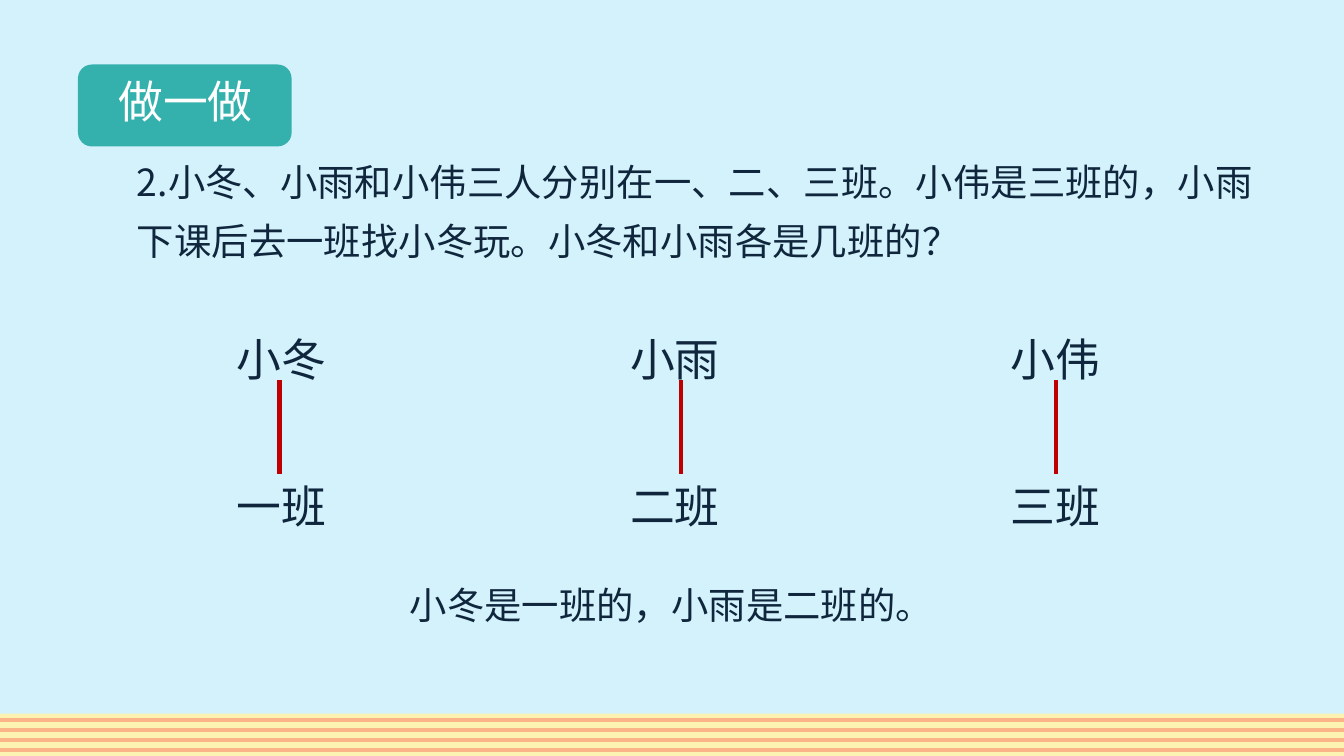
from lxml import etree
from pptx import Presentation
from pptx.dml.color import RGBColor
from pptx.enum.shapes import MSO_CONNECTOR, MSO_SHAPE
from pptx.enum.text import MSO_ANCHOR, PP_ALIGN
from pptx.oxml.ns import qn
from pptx.util import Inches, Pt

LINE = MSO_CONNECTOR.STRAIGHT
RECT, ROUND = MSO_SHAPE.RECTANGLE, MSO_SHAPE.ROUNDED_RECTANGLE
MIDDLE, LEFT = MSO_ANCHOR.MIDDLE, PP_ALIGN.LEFT

FONT = "Noto Sans CJK SC"
COLORS = {"sky": "D4F2FC", "band": "FCF3B2", "stripe": "FBB488", "badge": "35B1AD",
          "white": "FFFFFF", "ink": "0F263C", "match": "C00000"}
WIDTH = 10
HEIGHT = WIDTH * 9 / 16

TITLE = "做一做"
QUESTION = ("2.小冬、小雨和小伟三人分别在一、二、三班。小伟是三班的，"
            "小雨下课后去一班找小冬玩。小冬和小雨各是几班的？")
ANSWER = "小冬是一班的，小雨是二班的。"
# name, class, left of labels, x of matching line
MATCHES = [("小冬", "一班", 1.66, 2.08),
           ("小雨", "二班", 4.59, 5.07),
           ("小伟", "三班", 7.42, 7.86)]
NAME_TOP, CLASS_TOP = 2.26, 3.36
LINE_TOP, LINE_BOTTOM = 2.83, 3.53
STRIPE_TOP, STRIPE_BOTTOM, STRIPE_COUNT = 5.36, 5.58, 4


def rgb(name):
    return RGBColor.from_string(COLORS[name])


def add_block(slide, kind, box, color):
    sp = slide.shapes.add_shape(kind, *map(Inches, box))
    sp.shadow.inherit = False
    sp.fill.solid()
    sp.fill.fore_color.rgb = rgb(color)
    sp.line.fill.background()
    return sp


def add_line(slide, x1, y1, x2, y2, color):
    line = slide.shapes.add_connector(LINE, *map(Inches, (x1, y1, x2, y2)))
    line.line.color.rgb = rgb(color)
    line.line.width = Pt(2.25)
    etree.SubElement(line._element.spPr, qn("a:effectLst"))


def write(sp, text, size, color="ink", spacing=1.0, wrap=True):
    tf = sp.text_frame
    tf.word_wrap = wrap
    tf.vertical_anchor = MIDDLE
    p = tf.paragraphs[0]
    p.alignment = LEFT
    p.line_spacing = spacing
    p.space_before = Pt(0)
    r = p.add_run()
    r.text = text
    r.font.size = Pt(size)
    r.font.name = FONT
    r.font.color.rgb = rgb(color)
    etree.SubElement(r.font._element, qn("a:ea"), typeface=FONT)


def add_text(slide, box, text, size, **style):
    write(slide.shapes.add_textbox(*map(Inches, box)), text, size, **style)


def main():
    """Build the matching exercise slide."""
    prs = Presentation()
    prs.slide_width, prs.slide_height = Inches(WIDTH), Inches(HEIGHT)
    slide = prs.slides.add_slide(prs.slide_layouts[5])

    add_block(slide, RECT, (0, 0, WIDTH, HEIGHT), "sky")
    add_block(slide, RECT, (0, 5.31, WIDTH, HEIGHT - 5.31), "band")
    gap = (STRIPE_BOTTOM - STRIPE_TOP) / (STRIPE_COUNT - 1)
    for i in range(STRIPE_COUNT):
        y = STRIPE_TOP + i * gap
        add_line(slide, 0, y, WIDTH, y, "stripe")

    badge = add_block(slide, ROUND, (0.58, 0.48, 1.59, 0.61), "badge")
    badge.adjustments[0] = 0.17
    title = slide.shapes.title
    title.left, title.top, title.width, title.height = map(Inches, (0.78, 0.5, 1.21, 0.5))
    write(title, TITLE, 24, color="white", wrap=False)
    badge._element.addnext(title._element)

    add_text(slide, (0.92, 1.03, 8.58, 0.98), QUESTION, 20, spacing=1.3)
    for name, group, left, x in MATCHES:
        for text, top in ((name, NAME_TOP), (group, CLASS_TOP)):
            add_text(slide, (left, top, 1.29, 0.61), text, 24, spacing=1.5)
        add_line(slide, x, LINE_TOP, x, LINE_BOTTOM, "match")
    add_text(slide, (2.95, 4.28, 4.13, 0.44), ANSWER, 20, wrap=False)

    prs.save("out.pptx")


if __name__ == "__main__":
    main()
